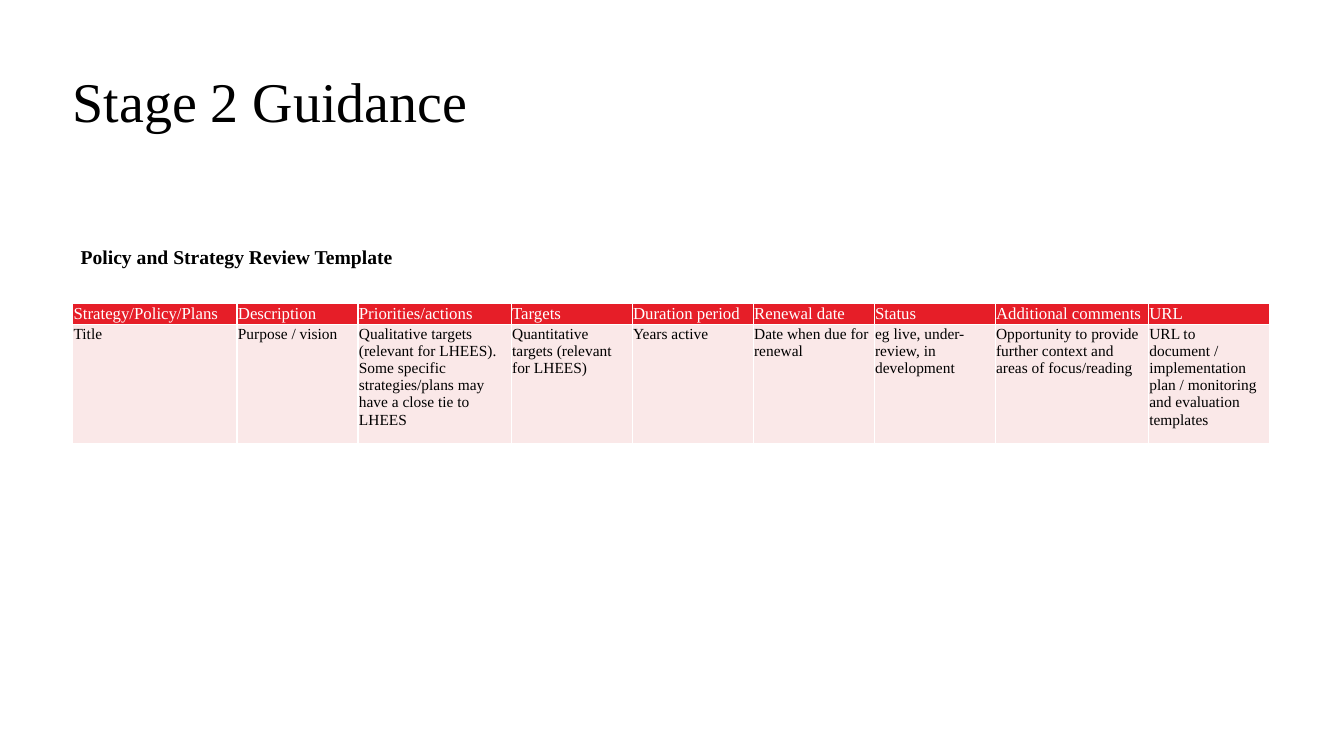
from lxml import etree
from pptx import Presentation
from pptx.dml.color import RGBColor
from pptx.enum import text
from pptx.oxml import ns
from pptx.util import Inches, Pt

COLOURS = {"header": "E61E28", "body": "FAE8E8", "white": "FFFFFF", "black": "000000"}
FONT = "Times New Roman"
COLUMNS = [
    (1.63, "Strategy/Policy/Plans", "Title"),
    (1.2, "Description", "Purpose / vision"),
    (1.52, "Priorities/actions",
     "Qualitative targets (relevant for LHEES). Some specific strategies/plans "
     "may have a close tie to LHEES"),
    (1.2, "Targets", "Quantitative targets (relevant for LHEES)"),
    (1.2, "Duration period", "Years active"),
    (1.2, "Renewal date", "Date when due for renewal"),
    (1.2, "Status", "eg live, under-review, in development"),
    (1.52, "Additional comments",
     "Opportunity to provide further context and areas of focus/reading"),
    (1.2, "URL",
     "URL to document / implementation plan / monitoring and evaluation templates"),
]
ROWS = [(0.19, "header", "white", 12), (1.18, "body", "black", 11)]


def add_span(para, words, size, colour, bold=False):
    span = para.add_run()
    span.text = words
    span.font.name = FONT
    span.font.size = Pt(size)
    span.font.bold = bold
    span.font.color.rgb = RGBColor.from_string(COLOURS[colour])


def add_box(page, left, top, width, height):
    frame = page.shapes.add_textbox(
        Inches(left), Inches(top), Inches(width), Inches(height)).text_frame
    frame.word_wrap = True
    frame.vertical_anchor = text.MSO_ANCHOR.TOP
    frame.margin_left = frame.margin_right = frame.margin_top = frame.margin_bottom = 0
    return frame.paragraphs[0]


deck = Presentation()
deck.slide_width = Inches(13.33)
deck.slide_height = Inches(7.5)
page = deck.slides.add_slide(deck.slide_layouts[6])

heading = add_box(page, 0.8, 2.43, 12.36, 0.4)
heading.space_after = Pt(9)
add_span(heading, "Policy and Strategy Review Template", 14, "black", True)

title = add_box(page, 0.72, 0.72, 9.87, 0.58)
title.line_spacing = Pt(44)
add_span(title, "Stage 2 Guidance", 40, "black")

table = page.shapes.add_table(
    len(ROWS), len(COLUMNS), Inches(0.72), Inches(3.01), Inches(11.89), Inches(1.37)).table
table.horz_banding = False

for column, (width, *words) in enumerate(COLUMNS):
    table.columns[column].width = Inches(width)
    for row, (height, fill, colour, size) in enumerate(ROWS):
        table.rows[row].height = Inches(height)
        cell = table.cell(row, column)
        cell.margin_left = cell.margin_right = cell.margin_top = Inches(0.01)
        cell.margin_bottom = 0
        add_span(cell.text_frame.paragraphs[0], words[row], size, colour)
        properties = cell._tc.get_or_add_tcPr()
        for side in ("a:lnL", "a:lnR", "a:lnT", "a:lnB"):
            border = etree.SubElement(properties, ns.qn(side), w=str(Pt(1)))
            paint = etree.SubElement(border, ns.qn("a:solidFill"))
            etree.SubElement(paint, ns.qn("a:srgbClr"), val=COLOURS["white"])
        cell.fill.solid()
        cell.fill.fore_color.rgb = RGBColor.from_string(COLOURS[fill])

deck.save("out.pptx")
